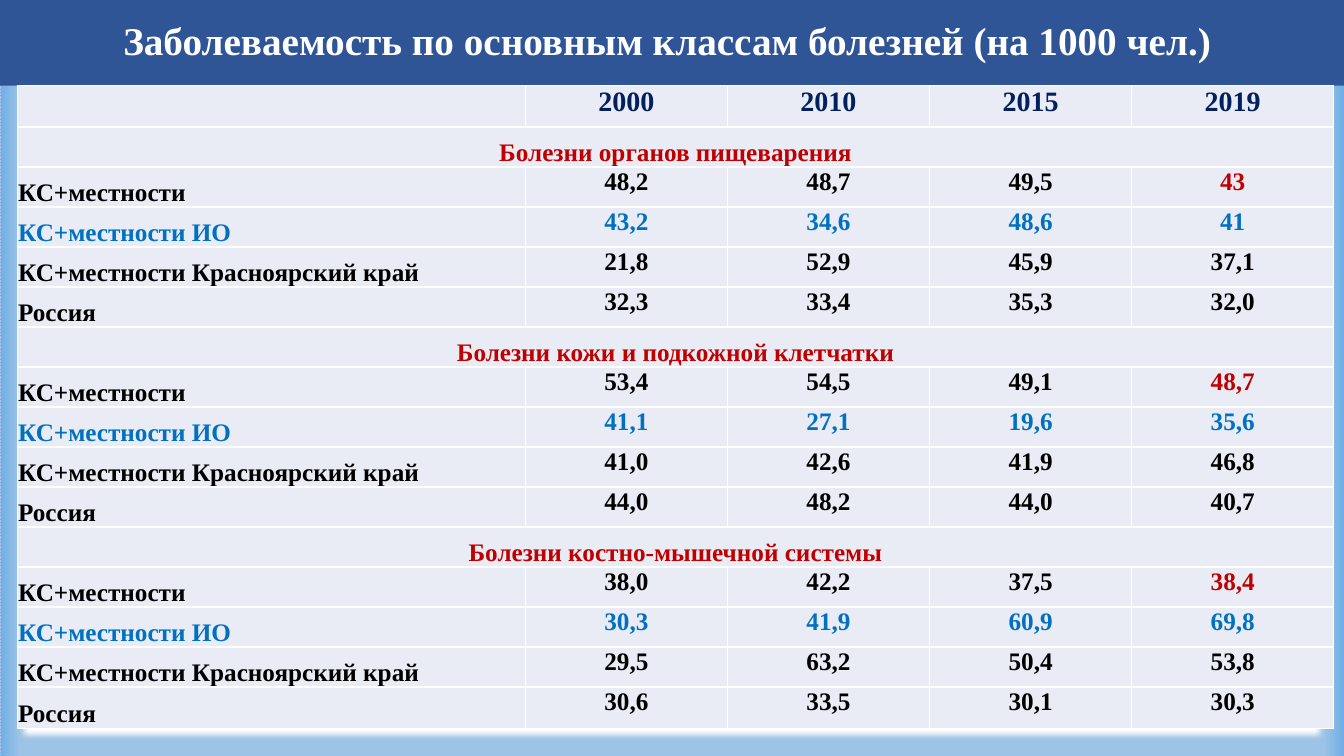
from lxml import etree
from pptx import Presentation
from pptx.dml.color import RGBColor
from pptx.enum.dml import MSO_LINE
from pptx.enum.shapes import MSO_SHAPE
from pptx.enum.text import MSO_ANCHOR, PP_ALIGN
from pptx.oxml.ns import qn
from pptx.util import Inches, Pt

RECTANGLE = MSO_SHAPE.RECTANGLE
TOP, MIDDLE, BOTTOM = MSO_ANCHOR.TOP, MSO_ANCHOR.MIDDLE, MSO_ANCHOR.BOTTOM
LEFT, CENTER = PP_ALIGN.LEFT, PP_ALIGN.CENTER
DOTTED = MSO_LINE.ROUND_DOT

WHITE = RGBColor(0xFF, 0xFF, 0xFF)
BLACK = RGBColor(0x00, 0x00, 0x00)
NAVY = RGBColor(0x00, 0x20, 0x60)
RED = RGBColor(0xC0, 0x00, 0x00)
BLUE = RGBColor(0x00, 0x70, 0xC0)
BANNER = RGBColor(0x2F, 0x55, 0x97)
CELL = RGBColor(0xE9, 0xEB, 0xF5)
FRAME_EDGE = RGBColor(0x6F, 0xAE, 0xE6)
FRAME_INNER = RGBColor(0x9D, 0xC3, 0xE6)
FRAME_LINE = RGBColor(0xAB, 0xC0, 0xE4)

FONT = "Times New Roman"
WIDTH, HEIGHT = 13.33, 7.5
TITLE = "Заболеваемость по основным классам болезней (на 1000 чел.) "
YEARS = ["2000", "2010", "2015", "2019"]
REGIONS = ["КС+местности", "КС+местности ИО",
           "КС+местности Красноярский край", "Россия"]
DISEASES = {
    "Болезни органов пищеварения": [
        ["48,2", "48,7", "49,5", "43"],
        ["43,2", "34,6", "48,6", "41"],
        ["21,8", "52,9", "45,9", "37,1"],
        ["32,3", "33,4", "35,3", "32,0"]],
    "Болезни кожи и подкожной клетчатки": [
        ["53,4", "54,5", "49,1", "48,7"],
        ["41,1", "27,1", "19,6", "35,6"],
        ["41,0", "42,6", "41,9", "46,8"],
        ["44,0", "48,2", "44,0", "40,7"]],
    "Болезни костно-мышечной системы": [
        ["38,0", "42,2", "37,5", "38,4"],
        ["30,3", "41,9", "60,9", "69,8"],
        ["29,5", "63,2", "50,4", "53,8"],
        ["30,6", "33,5", "30,1", "30,3"]],
}


def write(frame, text, size, color, align):
    para = frame.paragraphs[0]
    para.alignment = align
    span = para.add_run()
    span.text = text
    span.font.name = FONT
    span.font.size = Pt(size)
    span.font.bold = True
    span.font.color.rgb = color
    return para


def add_box(page, left, top, width, height):
    box = page.shapes.add_shape(RECTANGLE, Inches(left), Inches(top),
                                Inches(width), Inches(height))
    box.shadow.inherit = False
    box.line.fill.background()
    return box


def add_background(page, left, top, width, height):
    # Blue frame, darker towards the sides
    frame = add_box(page, left, top, width, height)
    frame.line.color.rgb = FRAME_LINE
    frame.line.width = Pt(0.5)
    frame.line.dash_style = DOTTED
    frame.fill.gradient()
    frame.fill.gradient_angle = 0
    stops = frame.fill._fill._gradFill.find(qn("a:gsLst"))
    for stop in list(stops):
        stops.remove(stop)
    for share, color in ((0, FRAME_EDGE), (1500, FRAME_INNER),
                         (98500, FRAME_INNER), (100000, FRAME_EDGE)):
        stop = etree.SubElement(stops, qn("a:gs"), pos=str(share))
        etree.SubElement(stop, qn("a:srgbClr"), val=str(color))

    # White panel with a soft edge
    panel = add_box(page, left + 0.17, top + 0.2, width - 0.33, height - 0.33)
    panel.fill.solid()
    panel.fill.fore_color.rgb = WHITE
    effects = panel._element.spPr.find(qn("a:effectLst"))
    etree.SubElement(effects, qn("a:softEdge"), rad=str(Inches(0.07)))


def add_title(page, left, top, width, height):
    banner = add_box(page, left, top, width, height)
    banner.fill.solid()
    banner.fill.fore_color.rgb = BANNER
    banner.text_frame.word_wrap = True
    banner.text_frame.vertical_anchor = MIDDLE
    para = write(banner.text_frame, TITLE, 28, WHITE, CENTER)
    para.line_spacing = 0.9


def style_cell(cell):
    cell.margin_left = cell.margin_right = cell.margin_top = Inches(0.01)
    cell.margin_bottom = 0
    properties = cell._tc.get_or_add_tcPr()
    for side in ("lnL", "lnR", "lnT", "lnB"):
        border = etree.SubElement(properties, qn(f"a:{side}"), w=str(Pt(1)))
        fill = etree.SubElement(border, qn("a:solidFill"))
        etree.SubElement(fill, qn("a:srgbClr"), val=str(WHITE))
    cell.fill.solid()
    cell.fill.fore_color.rgb = CELL


def fill_cell(cell, text, color, size=18, align=CENTER, anchor=TOP):
    cell.vertical_anchor = anchor
    write(cell.text_frame, text, size, color, align)


def add_disease_table(page, left, top, width, height):
    row_count = 1 + len(DISEASES) * (1 + len(REGIONS))
    table = page.shapes.add_table(
        row_count, 1 + len(YEARS), Inches(left), Inches(top),
        Inches(width), Inches(height)).table
    table.first_row = table.horz_banding = False

    # Grid: wide label column, slightly taller first and last rows
    label_width, end_height = 5.04, 0.41
    for index, column in enumerate(table.columns):
        year_width = (width - label_width) / len(YEARS)
        column.width = Inches(year_width if index else label_width)
    for index, row in enumerate(table.rows):
        inner_height = (height - 2 * end_height) / (row_count - 2)
        at_end = index in (0, row_count - 1)
        row.height = Inches(end_height if at_end else inner_height)
    for cell in table.iter_cells():
        style_cell(cell)

    # Year headings
    for column, year in enumerate(YEARS, 1):
        fill_cell(table.cell(0, column), year, NAVY, size=20)

    # One block per disease class; the first region's last value is red
    row = 1
    for disease, block in DISEASES.items():
        heading = table.cell(row, 0)
        heading.merge(table.cell(row, len(YEARS)))
        fill_cell(heading, disease, RED, anchor=BOTTOM)
        for region, values in zip(REGIONS, block):
            row += 1
            color = BLUE if region == REGIONS[1] else BLACK
            fill_cell(table.cell(row, 0), region, color, align=LEFT, anchor=BOTTOM)
            for column, value in enumerate(values, 1):
                marked = region == REGIONS[0] and column == len(YEARS)
                fill_cell(table.cell(row, column), value, RED if marked else color)
        row += 1


def main():
    deck = Presentation()
    deck.slide_width, deck.slide_height = Inches(WIDTH), Inches(HEIGHT)
    page = deck.slides.add_slide(deck.slide_layouts[6])
    add_background(page, 0, 0, WIDTH, HEIGHT)
    add_title(page, 0, 0, WIDTH, 0.85)
    add_disease_table(page, 0.17, 0.85, 13.06, 6.38)
    deck.save("out.pptx")


if __name__ == "__main__":
    main()
